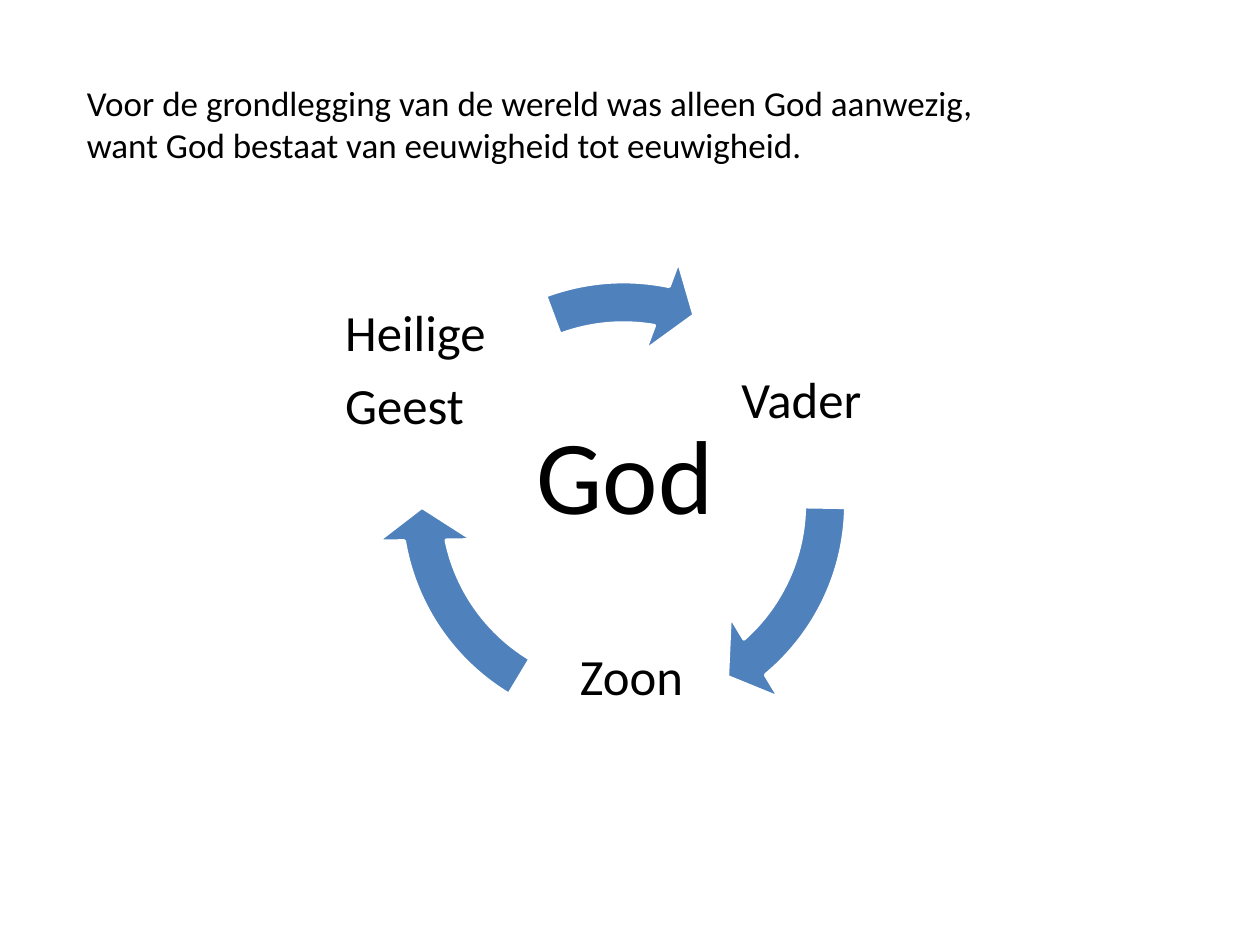
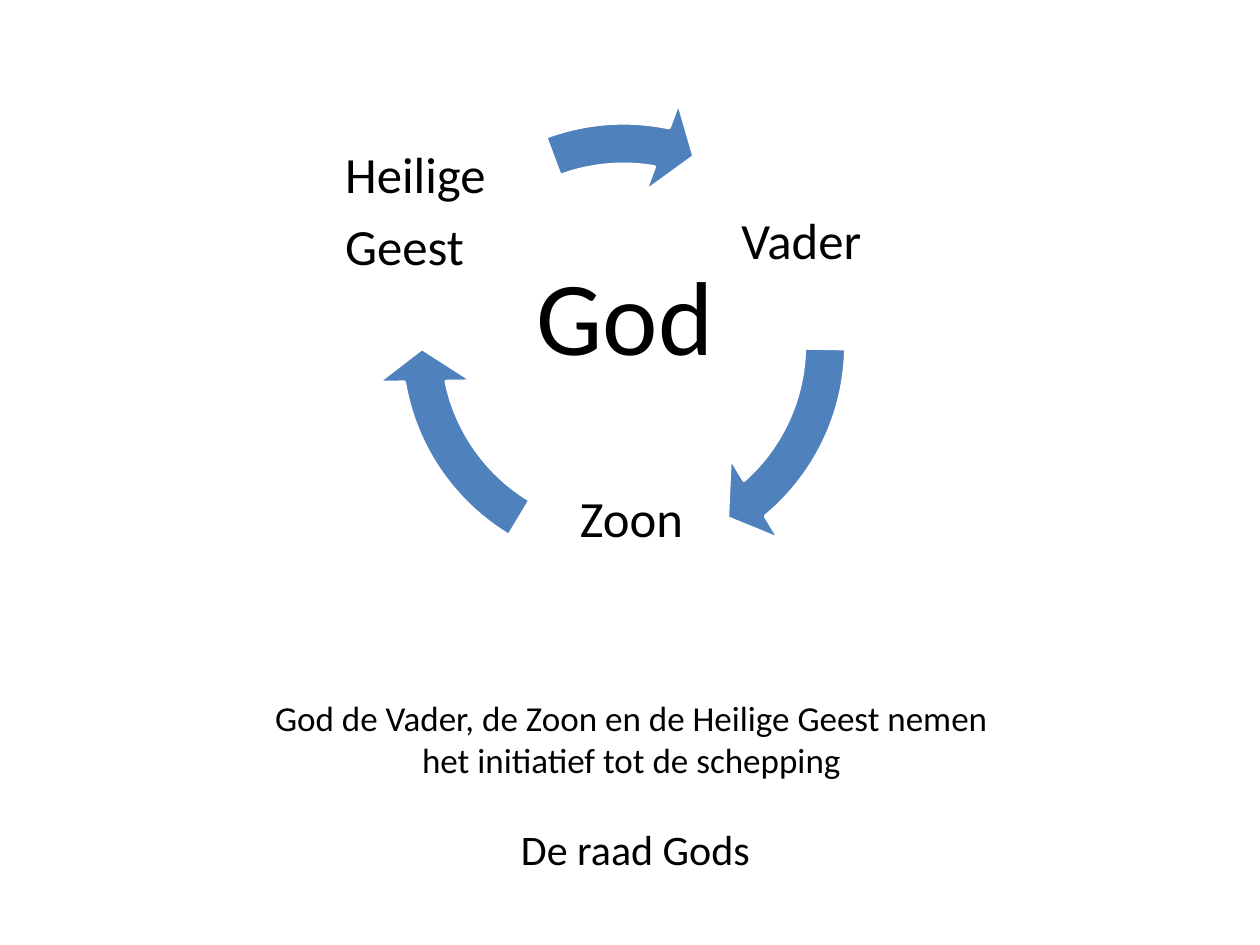
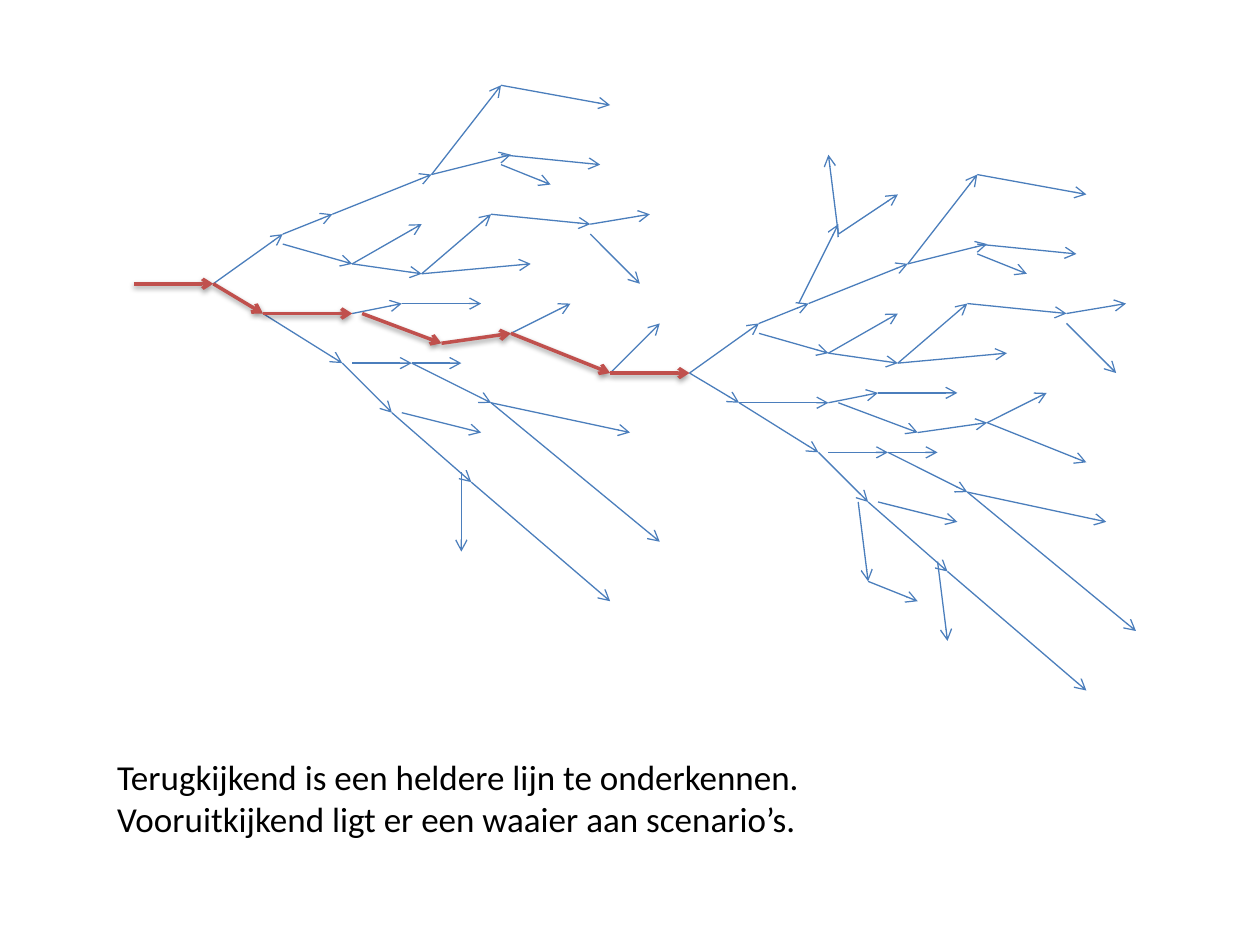
"""Build three slides on the council of God and the fan of scenarios."""
from lxml import etree
from pptx import Presentation
from pptx import util as u
from pptx.dml.color import RGBColor
from pptx.enum import shapes, text
from pptx.oxml import ns

FONT = "Calibri"
BLACK = RGBColor(0x00, 0x00, 0x00)
WHITE = RGBColor(0xFF, 0xFF, 0xFF)
CYCLE_BLUE = RGBColor(0x4F, 0x81, 0xBD)
BRANCH_BLUE = RGBColor(0x4B, 0x7E, 0xBC)
PATH_RED = RGBColor(0xC0, 0x50, 0x4D)

CYCLE_LEFT, CYCLE_SIZE = 7.54, 10.06
LABEL_SIZE, LABEL_INSET, LABEL_LIFT = 4.27, 0.1, 1.22
CYCLE_ARROWS = [(29.62, 0.53), (101.71, 72.61), (168.55, 149.68)]

GRID = 0.2
FIRST_ROOT = (4.3, 5.72)
SECOND_ROOT = (FIRST_ROOT[0] + 48 * GRID, FIRST_ROOT[1] + 9 * GRID)

CHOSEN = [
    (0, 0, 5, 3), (5, 3, 14, 3), (15, 3, 23, 6), (23, 6, 30, 5), (30, 5, 40, 9),
]
LEAD_IN_AND_OUT = [(-8, 0, 0, 0), (40, 9, 48, 9)]
SHARED_BRANCHES = [
    (0, 0, 7, -5), (7, -5, 12, -7), (7, -4, 14, -2), (5, 3, 13, 8),
    (13, 8, 18, 13), (14, 8, 20, 8), (14, 3, 19, 2), (14, -2, 21, -1),
    (12, -7, 22, -11), (18, 13, 26, 20), (19, 13, 27, 15), (20, 8, 28, 12),
    (20, 8, 25, 8), (19, 2, 27, 2), (21, -1, 28, -7), (14, -2, 21, -6),
    (21, -1, 32, -2), (22, -11, 29, -20), (22, -11, 30, -13),
    (28, -7, 38, -6), (29, -20, 40, -18), (29, -13, 39, -12),
    (29, -12, 34, -10), (38, -6, 44, -7), (38, -5, 43, 0), (30, 5, 36, 2),
    (28, 12, 42, 15), (28, 12, 45, 26), (26, 20, 40, 32),
]
FIRST_ONLY = [(40, 9, 45, 4), (25, 19, 25, 27)]
SECOND_ONLY = [
    (11, -7, 15, -15), (17, 13, 18, 21), (25, 19, 26, 27),
    (18, 21, 23, 23), (15, -14, 14, -22), (15, -14, 21, -18),
]


def add_text(slide, lines, left, top, width, height, size=20, align=text.PP_ALIGN.LEFT):
    """Add a wrapped text box with one paragraph per line and return its frame."""
    frame = slide.shapes.add_textbox(
        u.Cm(left), u.Cm(top), u.Cm(width), u.Cm(height)).text_frame
    frame.word_wrap = True
    frame.text = "\n".join(lines)
    for paragraph in frame.paragraphs:
        paragraph.alignment = align
        paragraph.font.name = FONT
        paragraph.font.size = u.Pt(size)
        paragraph.font.color.rgb = BLACK
    return frame


def add_person(slide, lines, left, top, align=text.PP_ALIGN.LEFT, indent=0, lift=0):
    """Label one person of the cycle, optionally indented and lifted."""
    frame = add_text(slide, lines, left, top, LABEL_SIZE, LABEL_SIZE, 29, align)
    frame.vertical_anchor = text.MSO_ANCHOR.MIDDLE
    frame.margin_top = frame.margin_right = u.Cm(LABEL_INSET)
    frame.margin_left = u.Cm(LABEL_INSET + indent)
    frame.margin_bottom = u.Cm(LABEL_INSET + lift)
    for paragraph in frame.paragraphs:
        paragraph.line_spacing = 0.9
        paragraph.space_after = u.Pt(10.15)


def add_cycle_arrow(slide, top, end, start):
    """Add one curved arrow of the cycle between two angles."""
    arrow = slide.shapes.add_shape(
        shapes.MSO_SHAPE.CIRCULAR_ARROW, u.Cm(CYCLE_LEFT), u.Cm(top),
        u.Cm(CYCLE_SIZE), u.Cm(CYCLE_SIZE))
    arrow.shadow.inherit = False
    arrow.fill.solid()
    arrow.fill.fore_color.rgb = CYCLE_BLUE
    arrow.line.color.rgb = WHITE
    arrow.line.width = u.Pt(2)
    for index, value in enumerate((0.083, 5.764, end, start, 0.096)):
        arrow.adjustments[index] = value


def add_trinity(slide, top):
    """Draw the cycle of Vader, Zoon and Heilige Geest around God."""
    add_text(slide, ["God"], 8.3, top + 3, 8.6, 2.82, 60, text.PP_ALIGN.CENTER)
    for end, start in CYCLE_ARROWS:
        add_cycle_arrow(slide, top, end, start)
    add_person(slide, ["Vader"], 14.02, top + 0.84, text.PP_ALIGN.CENTER)
    add_person(slide, ["Zoon"], 10.44, top + 7.04, indent=1.15, lift=LABEL_LIFT)
    add_person(slide, ["Heilige", "Geest"], 6.86, top + 0.84, lift=LABEL_LIFT)


def add_shadow(effects):
    """Put a soft shadow straight below into an effect list."""
    shadow = etree.SubElement(
        effects, ns.qn("a:outerShdw"), blurRad=str(u.Pt(3.1)), dist=str(u.Pt(1.6)),
        dir="5400000", rotWithShape="0")
    colour = etree.SubElement(shadow, ns.qn("a:srgbClr"), val=str(BLACK))
    etree.SubElement(colour, ns.qn("a:alpha"), val="38000")


def add_branches(slide, root, branches, chosen=False):
    """Draw arrows given in grid steps from the root of a tree."""
    for branch in branches:
        ends = [u.Cm(root[i % 2] + step * GRID) for i, step in enumerate(branch)]
        arrow = slide.shapes.add_connector(shapes.MSO_CONNECTOR.STRAIGHT, *ends)
        arrow.line.color.rgb = PATH_RED if chosen else BRANCH_BLUE
        arrow.line.width = u.Pt(2 if chosen else 0.75)
        properties = arrow._element.spPr
        etree.SubElement(properties.find(ns.qn("a:ln")), ns.qn("a:tailEnd"), type="arrow")
        effects = etree.SubElement(properties, ns.qn("a:effectLst"))
        if chosen:
            add_shadow(effects)


def build_eternity(slide):
    """Fill the slide about God before the foundation of the world."""
    add_text(slide, ["Voor de grondlegging van de wereld was alleen God aanwezig,",
                     "want God bestaat van eeuwigheid tot eeuwigheid."],
             1.5, 1.52, 22.8, 1.96)
    add_trinity(slide, 5.13)


def build_council(slide):
    """Fill the slide about the initiative for creation."""
    add_trinity(slide, 1.93)
    council = add_text(
        slide, ["God de Vader, de Zoon en de Heilige Geest nemen \v"
                "het initiatief tot de schepping ", "De raad Gods"],
        2.31, 13.92, 21, 3.84, align=text.PP_ALIGN.CENTER).paragraphs[1]
    council.font.size = u.Pt(24)
    council.space_before = u.Pt(24.4)


def build_scenarios(slide):
    """Fill the slide with two trees of scenarios and the path taken."""
    add_branches(slide, FIRST_ROOT, SHARED_BRANCHES + FIRST_ONLY)
    add_branches(slide, SECOND_ROOT, SHARED_BRANCHES + CHOSEN + SECOND_ONLY)
    add_branches(slide, FIRST_ROOT, CHOSEN + LEAD_IN_AND_OUT, chosen=True)
    add_text(slide, ["Terugkijkend is een heldere lijn te onderkennen.",
                     "Vooruitkijkend ligt er een waaier aan scenario’s."],
             2.11, 15.11, 21.2, 1.96)


def main():
    """Build and save the presentation."""
    deck = Presentation()
    deck.slide_width, deck.slide_height = u.Cm(25.4), u.Cm(19.05)
    blank = deck.slide_layouts.get_by_name("Blank")
    for build in (build_eternity, build_council, build_scenarios):
        build(deck.slides.add_slide(blank))
    deck.save("out.pptx")


if __name__ == "__main__":
    main()
